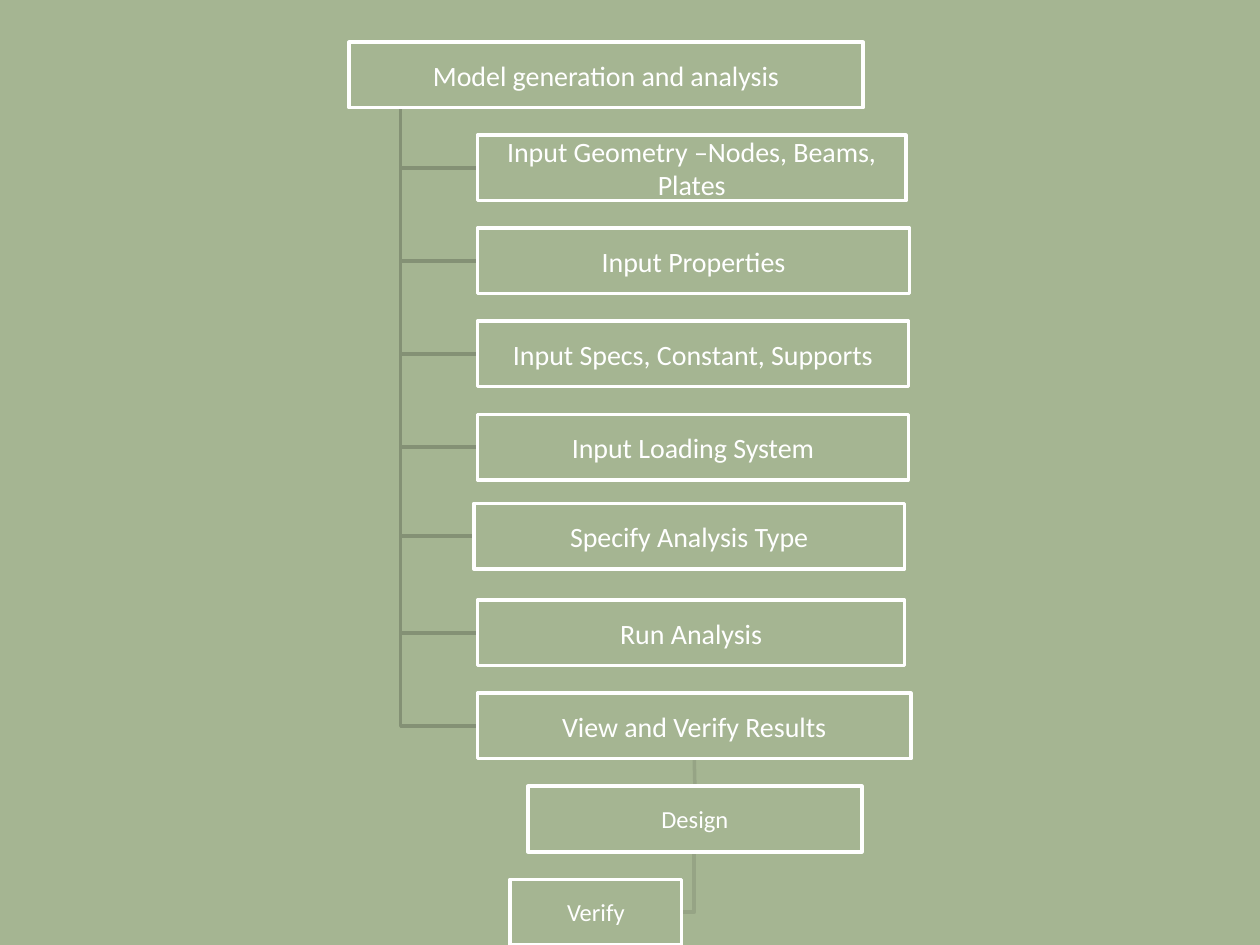
from pptx import Presentation
from pptx.dml.color import RGBColor
from pptx.enum.shapes import MSO_CONNECTOR, MSO_SHAPE
from pptx.enum.text import MSO_ANCHOR, PP_ALIGN
from pptx.oxml.ns import qn
from pptx.util import Inches, Pt
from lxml import etree

GREEN, WHITE, DARK, MID = "A5B592", "FFFFFF", "849175", "96A485"
HIGH, STEP = 0.52, 0.74  # box height, row pitch
TRUNK = 3.18


def paint(target, color):
    """Give a fill or a line one solid colour; lines are 2 pt."""
    if hasattr(target, "width"):
        target.width = Pt(2)
        target = target.fill
    target.solid()
    target.fore_color.rgb = RGBColor.from_string(color)


def elbow(points, color):
    """Draw an open, unfilled line through points in inches."""
    start, *rest = [(Inches(x), Inches(y)) for x, y in points]
    builder = shapes.build_freeform(*start)
    builder.add_line_segments(rest, close=False)
    line = builder.convert_to_shape()
    line.shadow.inherit = False
    line.fill.background()
    paint(line.line, color)


prs = Presentation()
prs.slide_width, prs.slide_height = Inches(10), Inches(7.5)
slide = prs.slides.add_slide(prs.slide_layouts[6])
shapes = slide.shapes
paint(slide.background.fill, GREEN)

# text, left, width, shift from the row grid
steps = [
    ("Input Geometry –Nodes, Beams, Plates", 3.79, 3.4, 0),
    ("Input Properties", 3.79, 3.43, 0),
    ("Input Specs, Constant, Supports", 3.79, 3.42, 0),
    ("Input Loading System", 3.79, 3.42, 0),
    ("Specify Analysis Type", 3.76, 3.42, -0.03),
    ("Run Analysis", 3.79, 3.39, 0),
    ("View and Verify Results", 3.79, 3.44, 0),
]
rows = [
    ("Model generation and analysis", 2.77, 4.08, 0),
    *steps,
    ("Design", 4.19, 2.65, 0),
    ("Verify", 4.05, 1.36, 0),
]
tops = [0.335 + STEP * i * 0.9975 + row[3] for i, row in enumerate(rows)]

# Lines lie behind the boxes
elbow([(5.51, 6.76), (5.51, 7.24), (5.4, 7.24)], MID)
for (text, left, wide, shift), top in zip(steps, tops[1:]):
    mid = top + HIGH / 2
    elbow([(TRUNK, 0.86), (TRUNK, mid), (left, mid)], DARK)
link = shapes.add_connector(
    MSO_CONNECTOR.STRAIGHT, Inches(5.51), Inches(6.02), Inches(5.51), Inches(6.24)
)
etree.SubElement(link._element.spPr, qn("a:effectLst"))
paint(link.line, MID)

boxes = {}
for (text, left, wide, shift), top in zip(rows, tops):
    box = shapes.add_shape(
        MSO_SHAPE.RECTANGLE, Inches(left), Inches(top), Inches(wide), Inches(HIGH)
    )
    boxes[text] = box
    box.shadow.inherit = False
    paint(box.fill, GREEN)
    paint(box.line, WHITE)
    frame = box.text_frame
    frame.word_wrap = True
    frame.vertical_anchor = MSO_ANCHOR.MIDDLE
    frame.margin_left = frame.margin_right = Inches(0.01)
    frame.margin_top = frame.margin_bottom = Inches(0.01)
    para = frame.paragraphs[0]
    para.text = text
    para.alignment = PP_ALIGN.CENTER
    para.font.name = "Calibri"
    para.font.size = Pt(14 if text in ("Design", "Verify") else 16)
    paint(para.font.fill, WHITE)

link.begin_connect(boxes["View and Verify Results"], 2)
link.end_connect(boxes["Design"], 0)

prs.save("out.pptx")
